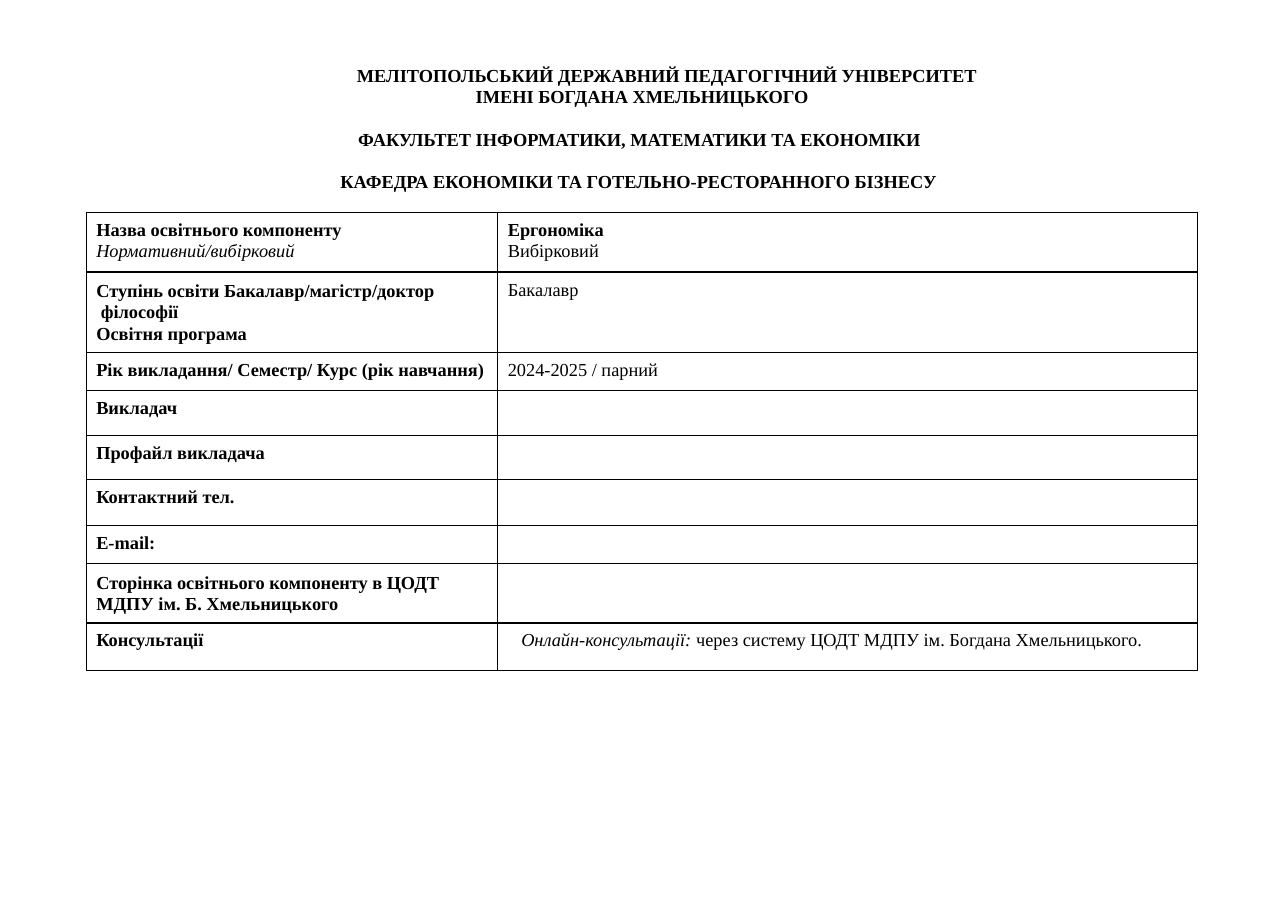
import dataclasses

import pptx
import pptx.dml.color
import pptx.enum.text
import pptx.oxml
import pptx.oxml.ns
import pptx.util

Cm = pptx.util.Cm
Pt = pptx.util.Pt


@dataclasses.dataclass
class Theme:
    font: str = "Times New Roman"
    size: float = 12
    leading: float = 13.8
    ink: str = "000000"
    paper: str = "FFFFFF"
    border: float = 1


@dataclasses.dataclass
class Line:
    text: str
    bold: bool = False
    italic: bool = False
    plain_tail: str = ""


@dataclasses.dataclass
class Entry:
    height: float
    label: list
    value: list
    label_top: float = 0.16
    value_left: float = 0.24


HEADING = [
    ("МЕЛІТОПОЛЬСЬКИЙ ДЕРЖАВНИЙ ПЕДАГОГІЧНИЙ УНІВЕРСИТЕТ\v"
     "ІМЕНІ БОГДАНА ХМЕЛЬНИЦЬКОГО", 3.15, -2.74, 13.8, 0),
    ("ФАКУЛЬТЕТ ІНФОРМАТИКИ, МАТЕМАТИКИ ТА ЕКОНОМІКИ\v"
     "КАФЕДРА ЕКОНОМІКИ ТА ГОТЕЛЬНО-РЕСТОРАННОГО БІЗНЕСУ", 0.03, 0.41, 27.6, 0.8),
]

ENTRIES = [
    Entry(1.37, [Line("Назва освітнього компоненту", bold=True),
                 Line("Нормативний/вибірковий", italic=True)],
          [Line("Ергономіка", bold=True), Line("Вибірковий")]),
    Entry(1.85, [Line("Ступінь освіти Бакалавр/магістр/доктор\v філософії", bold=True),
                 Line("Освітня програма", bold=True)],
          [Line("Бакалавр")], label_top=0.2),
    Entry(0.88, [Line("Рік викладання/ Семестр/ Курс (рік навчання)", bold=True)],
          [Line("2024-2025 / парний")]),
    Entry(1.04, [Line("Викладач", bold=True)], []),
    Entry(1.02, [Line("Профайл викладача", bold=True)], []),
    Entry(1.06, [Line("Контактний тел.", bold=True)], []),
    Entry(0.87, [Line("E-mail:", bold=True)], []),
    Entry(1.37, [Line("Сторінка освітнього компоненту в ЦОДТ\v"
                      "МДПУ ім. Б. Хмельницького", bold=True)],
          [], label_top=0.2),
    Entry(1.1, [Line("Консультації", bold=True)],
          [Line("Онлайн-консультації: ", italic=True,
                plain_tail="через систему ЦОДТ МДПУ ім. Богдана Хмельницького.")],
          value_left=0.55),
]


class SyllabusSlide:
    def __init__(self, presentation, theme):
        self.theme = theme
        self.slide = presentation.slides.add_slide(presentation.slide_layouts[5])
        background = self.slide.background.fill
        background.solid()
        background.fore_color.rgb = pptx.dml.color.RGBColor.from_string(theme.paper)

    def style(self, paragraph, bold, leading):
        paragraph.alignment = pptx.enum.text.PP_ALIGN.LEFT
        paragraph.line_spacing = Pt(leading)
        paragraph.space_before = Pt(0)
        paragraph.font.name = self.theme.font
        paragraph.font.size = Pt(self.theme.size)
        paragraph.font.bold = bold
        paragraph.font.color.rgb = pptx.dml.color.RGBColor.from_string(self.theme.ink)

    def heading(self, left, top, width, height, blocks):
        title = self.slide.shapes.title
        title.left, title.top, title.width, title.height = map(Cm, (left, top, width, height))
        frame = title.text_frame
        frame.word_wrap = True
        frame.auto_size = pptx.enum.text.MSO_AUTO_SIZE.NONE
        frame.vertical_anchor = pptx.enum.text.MSO_ANCHOR.TOP
        frame.margin_left = frame.margin_right = frame.margin_bottom = 0
        frame.margin_top = Cm(0.07)
        for index, (text, margin, indent, leading, before) in enumerate(blocks):
            paragraph = frame.add_paragraph() if index else frame.paragraphs[0]
            paragraph.text = text
            self.style(paragraph, True, leading)
            paragraph.space_before = Pt(before)
            properties = paragraph._p.get_or_add_pPr()
            properties.set("marL", str(Cm(margin)))
            properties.set("indent", str(Cm(indent)))

    def outline(self, cell):
        properties = cell._tc.get_or_add_tcPr()
        for position, side in enumerate(("lnL", "lnR", "lnT", "lnB")):
            edge = pptx.oxml.parse_xml(
                f'<a:{side} {pptx.oxml.ns.nsdecls("a")} w="{Pt(self.theme.border)}">'
                f'<a:solidFill><a:srgbClr val="{self.theme.ink}"/></a:solidFill></a:{side}>')
            properties.insert(position, edge)

    def cell(self, cell, lines, left, top):
        cell.margin_left, cell.margin_top = Cm(left), Cm(top)
        cell.margin_right = cell.margin_bottom = 0
        cell.fill.solid()
        cell.fill.fore_color.rgb = pptx.dml.color.RGBColor.from_string(self.theme.paper)
        self.outline(cell)
        frame = cell.text_frame
        for index, line in enumerate(lines or [Line("")]):
            paragraph = frame.add_paragraph() if index else frame.paragraphs[0]
            paragraph.text = line.text
            self.style(paragraph, line.bold, self.theme.leading)
            if line.plain_tail:
                paragraph.runs[0].font.italic = line.italic
                paragraph.add_run().text = line.plain_tail
            else:
                paragraph.font.italic = line.italic

    def details(self, left, top, column_widths, entries):
        table = self.slide.shapes.add_table(
            len(entries), len(column_widths), Cm(left), Cm(top),
            Cm(sum(column_widths)), Cm(sum(entry.height for entry in entries))).table
        table.first_row = table.horz_banding = False
        for column, width in zip(table.columns, column_widths):
            column.width = Cm(width)
        for row, entry in zip(table.rows, entries):
            row.height = Cm(entry.height)
            label, value = row.cells
            self.cell(label, entry.label, 0.22, entry.label_top)
            self.cell(value, entry.value, entry.value_left, 0.16)


def main():
    presentation = pptx.Presentation()
    presentation.slide_width = Cm(29.7)
    presentation.slide_height = Cm(21)
    syllabus = SyllabusSlide(presentation, Theme())
    syllabus.heading(7.82, 1.42, 15, 3.02, HEADING)
    syllabus.details(2, 4.9, (9.47, 16.15), ENTRIES)
    presentation.save("out.pptx")


if __name__ == "__main__":
    main()
